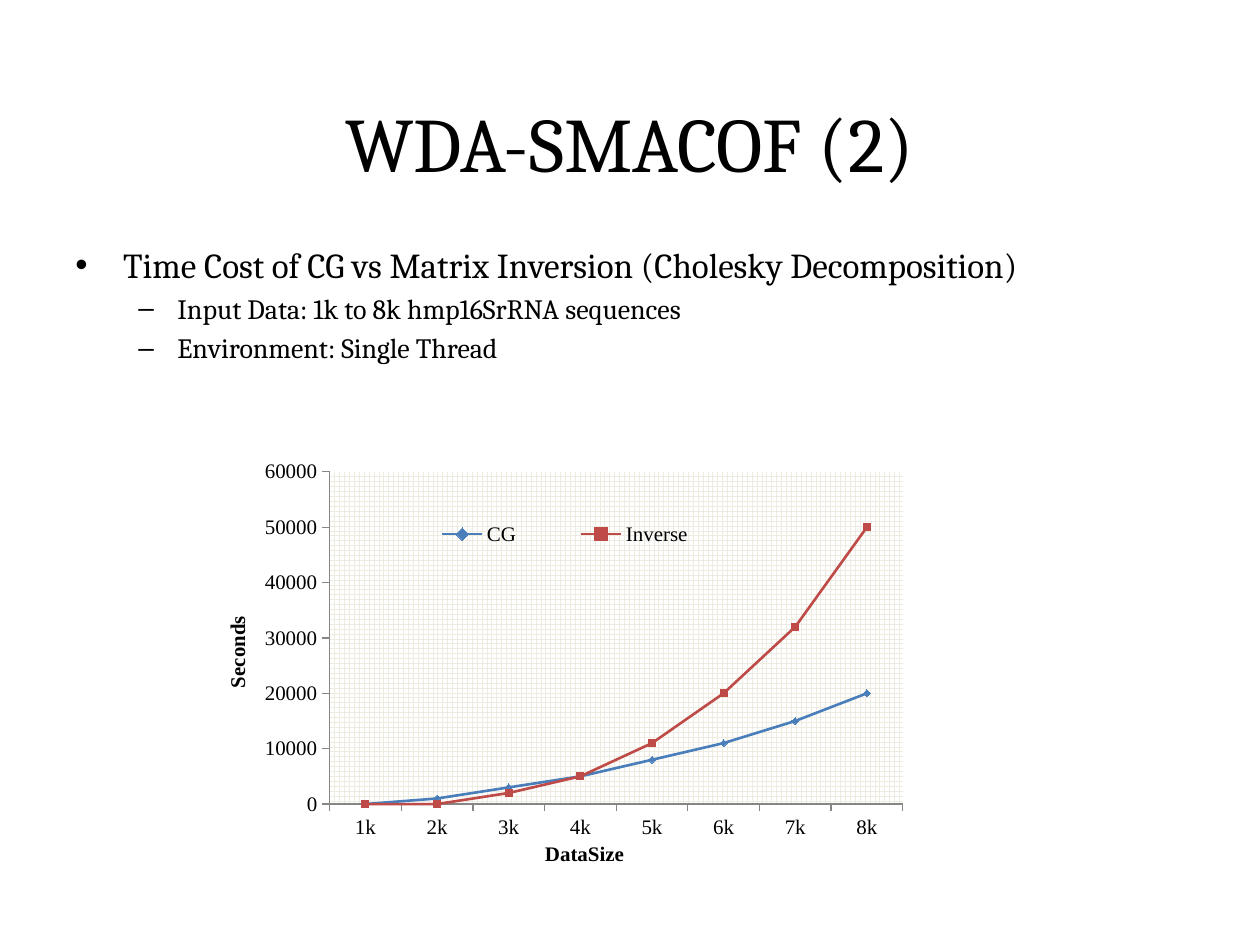
from dataclasses import dataclass

from lxml import etree
from pptx import Presentation
from pptx.chart.data import CategoryChartData
from pptx.dml.color import RGBColor
from pptx.enum.chart import XL_CHART_TYPE, XL_LEGEND_POSITION, XL_MARKER_STYLE, XL_TICK_MARK
from pptx.enum.dml import MSO_PATTERN
from pptx.enum.text import MSO_ANCHOR, PP_ALIGN
from pptx.oxml import parse_xml
from pptx.oxml.ns import nsdecls, qn
from pptx.util import Inches, Pt


@dataclass(frozen=True)
class Theme:
    text_font: str = "Cambria"
    chart_font: str = "Times New Roman"
    text: RGBColor = RGBColor(0, 0, 0)
    axis: RGBColor = RGBColor.from_string("868686")
    grid: RGBColor = RGBColor.from_string("EEECE1")
    paper: RGBColor = RGBColor.from_string("FFFFFF")
    series: tuple = (RGBColor.from_string("4F81BD"), RGBColor.from_string("C0504D"))
    series_lines: tuple = (RGBColor.from_string("4A7EBB"), RGBColor.from_string("BE4B48"))
    title_size: int = 44
    level_sizes: tuple = (20, 16)
    chart_size: int = 12


THEME = Theme()
BULLETS = (("•", 0.38, 0.38), ("–", 0.81, 0.31))
POINTS = (
    ("Time Cost of CG vs Matrix Inversion (Cholesky Decomposition)", 0),
    ("Input Data: 1k to 8k hmp16SrRNA sequences", 1),
    ("Environment: Single Thread", 1),
)
SERIES = (
    ("CG", (0, 1000, 3000, 5000, 8000, 11000, 15000, 20000), XL_MARKER_STYLE.DIAMOND),
    ("Inverse", (0, 0, 2000, 5000, 11000, 20000, 32000, 50000), XL_MARKER_STYLE.SQUARE),
)


def apply_format(target, values):
    for name, value in values.items():
        setattr(target, name, value)


def style_font(font, name, size, bold=False):
    apply_format(font, {"name": name, "size": Pt(size), "bold": bold})
    font.color.rgb = THEME.text


def add_text_frame(slide, box, anchor):
    frame = slide.shapes.add_textbox(*map(Inches, box)).text_frame
    apply_format(frame, {"word_wrap": True, "vertical_anchor": anchor})
    return frame


def add_title(slide, box):
    paragraph = add_text_frame(slide, box, MSO_ANCHOR.MIDDLE).paragraphs[0]
    apply_format(paragraph, {"text": "WDA-SMACOF (2)", "alignment": PP_ALIGN.CENTER})
    style_font(paragraph.font, THEME.text_font, THEME.title_size)


def add_points(slide, box):
    frame = add_text_frame(slide, box, MSO_ANCHOR.TOP)
    for index, (text, level) in enumerate(POINTS):
        paragraph = frame.add_paragraph() if index else frame.paragraphs[0]
        size = THEME.level_sizes[level]
        space = Pt(size * 0.22) if index else Pt(0)
        apply_format(paragraph, {"text": text, "level": level, "space_before": space})
        bullet, margin, hanging = BULLETS[level]
        properties = paragraph._p.get_or_add_pPr()
        properties.set("marL", str(Inches(margin)))
        properties.set("indent", str(-Inches(hanging)))
        etree.SubElement(properties, qn("a:buFont")).set("typeface", "Arial")
        etree.SubElement(properties, qn("a:buChar")).set("char", bullet)
        style_font(paragraph.font, THEME.text_font, size)


def set_layout(element, index, **values):
    for old in element.findall(qn("c:layout")):
        element.remove(old)
    layout = etree.Element(qn("c:layout"))
    manual = etree.SubElement(layout, qn("c:manualLayout"))
    for name, value in values.items():
        etree.SubElement(manual, qn(f"c:{name}")).set("val", str(value))
    element.insert(index, layout)


def style_axis(axis, title, x, y):
    apply_format(axis, {"has_major_gridlines": False, "major_tick_mark": XL_TICK_MARK.OUTSIDE,
                        "minor_tick_mark": XL_TICK_MARK.NONE})
    axis.format.line.color.rgb = THEME.axis
    style_font(axis.tick_labels.font, THEME.chart_font, THEME.chart_size)
    frame = axis.axis_title.text_frame
    frame.text = title
    style_font(frame.paragraphs[0].runs[0].font, THEME.chart_font, THEME.chart_size, True)
    set_layout(axis.axis_title._element, 1, xMode="edge", yMode="edge", x=x, y=y)


def fill_plot_area(chart):
    area = chart._chartSpace.chart.plotArea
    set_layout(area, 0, layoutTarget="inner", xMode="edge", yMode="edge",
               x=0.16, y=0.05, w=0.84, h=0.8)
    area.append(parse_xml(
        f'<c:spPr {nsdecls("c", "a")}><a:pattFill prst="{MSO_PATTERN.to_xml(MSO_PATTERN.LARGE_GRID)}">'
        f'<a:fgClr><a:srgbClr val="{THEME.grid}"/></a:fgClr>'
        f'<a:bgClr><a:srgbClr val="{THEME.paper}"/></a:bgClr></a:pattFill></c:spPr>'))


def add_time_chart(slide, box):
    data = CategoryChartData(number_format="General")
    data.categories = [f"{size}k" for size in range(1, 9)]
    for name, values, _ in SERIES:
        data.add_series(name, values)
    chart = slide.shapes.add_chart(XL_CHART_TYPE.LINE_MARKERS, *map(Inches, box), data).chart
    chart.has_title = False
    style_font(chart.font, THEME.chart_font, THEME.chart_size)
    style_axis(chart.category_axis, "DataSize", 0.47, 0.93)
    style_axis(chart.value_axis, "Seconds", 0, 0.39)
    apply_format(chart.value_axis, {"minimum_scale": 0, "maximum_scale": 60000, "major_unit": 10000})
    body = chart.value_axis.axis_title.text_frame._txBody.bodyPr
    body.set("rot", "-5400000")
    body.set("vert", "horz")
    chart.plots[0].vary_by_categories = False
    for series, (_, _, marker), color, line_color in zip(
            chart.plots[0].series, SERIES, THEME.series, THEME.series_lines):
        series.smooth = False
        series.format.line.width = Pt(1.5)
        series.format.line.color.rgb = line_color
        apply_format(series.marker, {"style": marker, "size": 4})
        series.marker.format.fill.solid()
        series.marker.format.fill.fore_color.rgb = color
        series.marker.format.line.color.rgb = line_color
    chart.has_legend = True
    apply_format(chart.legend, {"position": XL_LEGEND_POSITION.RIGHT, "include_in_layout": False})
    style_font(chart.legend.font, THEME.chart_font, THEME.chart_size)
    set_layout(chart.legend._element, 1, xMode="edge", yMode="edge", x=0.24, y=0.15, w=0.53, h=0.1)
    fill_plot_area(chart)


def main():
    presentation = Presentation()
    apply_format(presentation, {"slide_width": Inches(10), "slide_height": Inches(7.5)})
    slide = presentation.slides.add_slide(presentation.slide_layouts[6])
    add_title(slide, (0.5, 0.5, 9, 1.25))
    add_points(slide, (0.5, 1.88, 9, 4.95))
    add_time_chart(slide, (1.75, 3.58, 5.42, 3.34))
    presentation.save("out.pptx")


if __name__ == "__main__":
    main()
